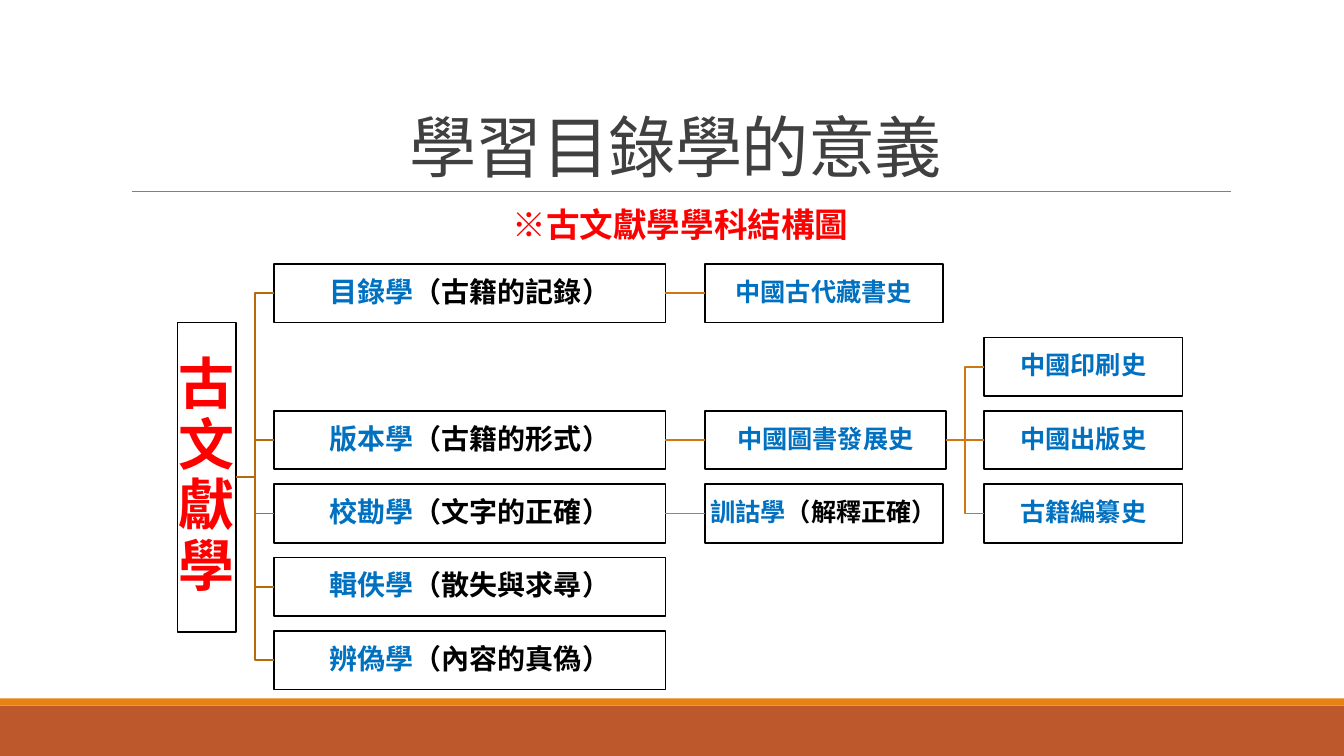
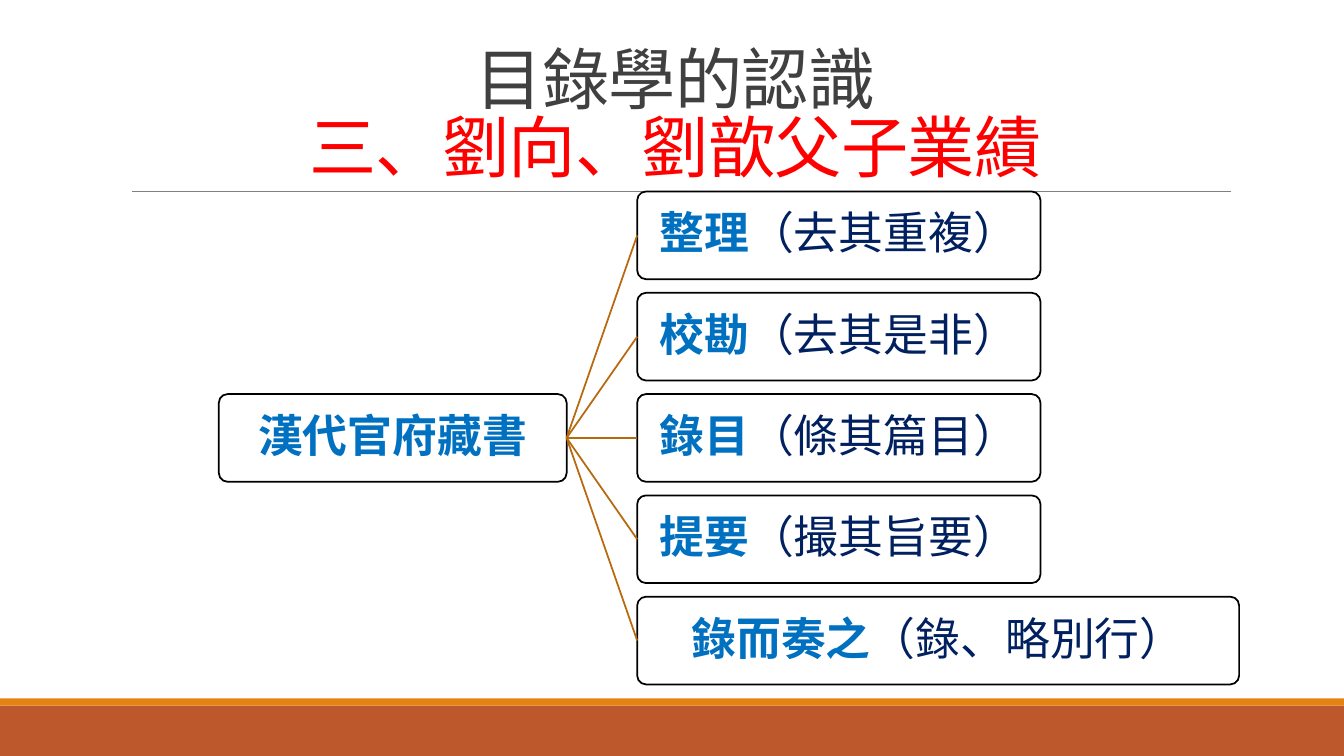
from dataclasses import dataclass

from lxml.etree import SubElement
from pptx import Presentation
from pptx.dml.color import RGBColor
from pptx.enum.shapes import MSO_CONNECTOR as Link, MSO_SHAPE as Form
from pptx.enum.text import MSO_ANCHOR as Anchor, MSO_AUTO_SIZE as Fit, PP_ALIGN as Align
from pptx.oxml.ns import qn
from pptx.util import Inches, Pt

# Shared look
WIDE, HIGH = 13.33, 7.5
FONT = "Noto Sans CJK SC"
RED, BLUE, NAVY, BLACK, WHITE = "FF0000", "0070C0", "002060", "000000", "FFFFFF"
GREY, RULE = "404040", "808080"
RUST, GOLD, BROWN, AMBER = "BD582C", "E48312", "B7690E", "CF7710"


@dataclass
class Run:
    text: str
    size: float
    hue: str
    bold: bool = False
    gap: int = 0


@dataclass
class Col:
    left: float
    width: float
    size: float = 0


@dataclass
class Grid:
    top: float
    step: float
    high: float
    form: Form
    note: str
    heavy: bool


@dataclass
class Node:
    name: str
    note: str
    col: Col
    row: int
    up: str
    hue: str = BROWN


# Subject chart: three columns on six rows
TREE = Grid(2.62, 3.64 / 5, 0.58, Form.RECTANGLE, BLACK, True)
ROOT = Col(1.76, 0.58, 40)
FIELD = Col(2.72, 3.88, 20)
SIDE = Col(6.99, 2.36, 18)
BOOK = Col(6.99, 2.39, 18)
LEAF = Col(9.76, 1.97, 18)
FIELDS = [
    Node("目錄學", "（古籍的記錄）", FIELD, 0, "古文獻學"),
    Node("版本學", "（古籍的形式）", FIELD, 2, "古文獻學"),
    Node("校勘學", "（文字的正確）", FIELD, 3, "古文獻學"),
    Node("輯佚學", "（散失與求尋）", FIELD, 4, "古文獻學"),
    Node("辨偽學", "（內容的真偽）", FIELD, 5, "古文獻學"),
    Node("中國古代藏書史", "", SIDE, 0, "目錄學", AMBER),
    Node("中國圖書發展史", "", BOOK, 2, "版本學", AMBER),
    Node("訓詁學", "（解釋正確）", SIDE, 3, "校勘學", AMBER),
    Node("中國印刷史", "", LEAF, 1, "中國圖書發展史", AMBER),
    Node("中國出版史", "", LEAF, 2, "中國圖書發展史", AMBER),
    Node("古籍編纂史", "", LEAF, 3, "中國圖書發展史", AMBER),
]

# Library chart: one source and five tasks
FAN = Grid(1.9, 4.02 / 4, 0.87, Form.ROUNDED_RECTANGLE, NAVY, False)
STORE = Col(2.17, 3.45, 32)
TASK = Col(6.32, 4, 32)
LAST = Col(6.32, 5.97, 32)
TASKS = [
    Node("整理", "（去其重複）", TASK, 0, "漢代官府藏書"),
    Node("校勘", "（去其是非）", TASK, 1, "漢代官府藏書"),
    Node("錄目", "（條其篇目）", TASK, 2, "漢代官府藏書"),
    Node("提要", "（撮其旨要）", TASK, 3, "漢代官府藏書"),
    Node("錄而奏之", "（錄、略別行）", LAST, 4, "漢代官府藏書"),
]


def rgb(hue: str) -> RGBColor:
    return RGBColor.from_string(hue)


def place(shape, left: float, top: float, width: float, high: float) -> None:
    shape.left, shape.top = Inches(left), Inches(top)
    shape.width, shape.height = Inches(width), Inches(high)


def write(para, run: Run) -> None:
    part = para.add_run()
    part.text = run.text
    font = part.font
    font.size, font.bold = Pt(run.size), run.bold
    font.color.rgb = rgb(run.hue)
    font.name = FONT
    props = part.font._element
    SubElement(props, qn("a:ea")).set("typeface", FONT)
    if run.gap:
        props.set("spc", str(run.gap))


def block(slide, form: Form, area: tuple, fill: str, edge: str = ""):
    shape = slide.shapes.add_shape(form, *map(Inches, area))
    shape.shadow.inherit = False
    shape.fill.solid()
    shape.fill.fore_color.rgb = rgb(fill)
    if edge:
        shape.line.color.rgb, shape.line.width = rgb(edge), Pt(1.25)
    else:
        shape.line.fill.background()
    return shape


def label(slide, form: Form, area: tuple, runs: list[Run]):
    shape = block(slide, form, area, WHITE, BLACK)
    if form == Form.ROUNDED_RECTANGLE:
        shape.adjustments[0] = 0.1
    frame = shape.text_frame
    frame.word_wrap, frame.vertical_anchor = True, Anchor.MIDDLE
    frame.margin_left = frame.margin_right = Inches(0.01)
    frame.margin_top = frame.margin_bottom = Inches(0.01)
    para = frame.paragraphs[0]
    para.alignment, para.line_spacing = Align.CENTER, 0.9
    for run in runs:
        write(para, run)
    return shape


def wire(slide, kind: Link, ends: tuple, hue: str, thick: float):
    line = slide.shapes.add_connector(kind, *map(Inches, ends))
    line.line.color.rgb, line.line.width = rgb(hue), Pt(thick)
    SubElement(line._element.spPr, qn("a:effectLst"))
    return line


def join(slide, start, end, bent: bool, hue: str) -> None:
    rise = start.top + start.height / 2 - end.top - end.height / 2
    bent = bent and abs(rise) > Inches(0.02)
    line = wire(slide, Link.ELBOW if bent else Link.STRAIGHT, (0, 0, 1, 1), hue, 1.25)
    line.begin_connect(start, 3)
    line.end_connect(end, 1)


def begin(deck, layout: int, lines: list[tuple[str, str]]):
    """Add a slide with its bands, rule and title."""
    slide = deck.slides.add_slide(deck.slide_layouts[layout])
    block(slide, Form.RECTANGLE, (0, 7, WIDE, 0.5), RUST)
    block(slide, Form.RECTANGLE, (0, 6.93, WIDE, 0.07), GOLD)
    wire(slide, Link.STRAIGHT, (1.31, 1.9, 12.21, 1.9), RULE, 0.5)
    title = slide.shapes.title
    place(title, 1.2, 0.31, 11, 1.59)
    frame = title.text_frame
    frame.auto_size, frame.vertical_anchor = Fit.NONE, Anchor.BOTTOM
    para = frame.paragraphs[0]
    para.alignment, para.line_spacing = Align.CENTER, 0.85
    for place_no, (text, hue) in enumerate(lines):
        if place_no:
            para.add_line_break()
        write(para, Run(text, 48, hue, gap=-50))
    return slide


def heading(slide, text: str) -> None:
    body = slide.placeholders[1]
    place(body, 1.2, 2.02, 11, 4.83)
    frame = body.text_frame
    frame.auto_size = Fit.NONE
    frame.margin_left = frame.margin_right = 0
    para = frame.paragraphs[0]
    para.alignment, para.line_spacing = Align.CENTER, 0.9
    para.space_before, para.space_after = Pt(12), Pt(2)
    props = para._p.get_or_add_pPr()
    props.set("marL", str(Inches(0.1)))
    props.set("indent", "0")
    SubElement(props, qn("a:buNone"))
    write(para, Run(text, 24, RED, True))


def chart(slide, grid: Grid, root, name: str, nodes: list[Node], bent: bool) -> None:
    """Draw the nodes on their rows and join each to its parent."""
    drawn = {name: root}
    for node in nodes:
        col = node.col
        runs = [Run(node.name, col.size, BLUE, True)]
        if node.note:
            runs.append(Run(node.note, col.size, grid.note, grid.heavy))
        area = (col.left, grid.top + node.row * grid.step, col.width, grid.high)
        drawn[node.name] = label(slide, grid.form, area, runs)
        join(slide, drawn[node.up], drawn[node.name], bent, node.hue)


def main() -> None:
    deck = Presentation()
    deck.slide_width, deck.slide_height = Inches(WIDE), Inches(HIGH)

    # Structure of the subject
    slide = begin(deck, 1, [("學習目錄學的意義", GREY)])
    heading(slide, "※古文獻學學科結構圖")
    name = "古文獻學"
    root = label(slide, TREE.form, (ROOT.left, 3.2, ROOT.width, 3.07),
                 [Run(name, ROOT.size, RED, True)])
    chart(slide, TREE, root, name, FIELDS, True)

    # Work of father and son
    slide = begin(deck, 5, [("目錄學的認識", GREY), ("三、劉向、劉歆父子業績", RED)])
    name = "漢代官府藏書"
    area = (STORE.left, FAN.top + 2 * FAN.step, STORE.width, FAN.high)
    root = label(slide, FAN.form, area, [Run(name, STORE.size, BLUE, True)])
    chart(slide, FAN, root, name, TASKS, False)

    deck.save("out.pptx")


if __name__ == "__main__":
    main()
